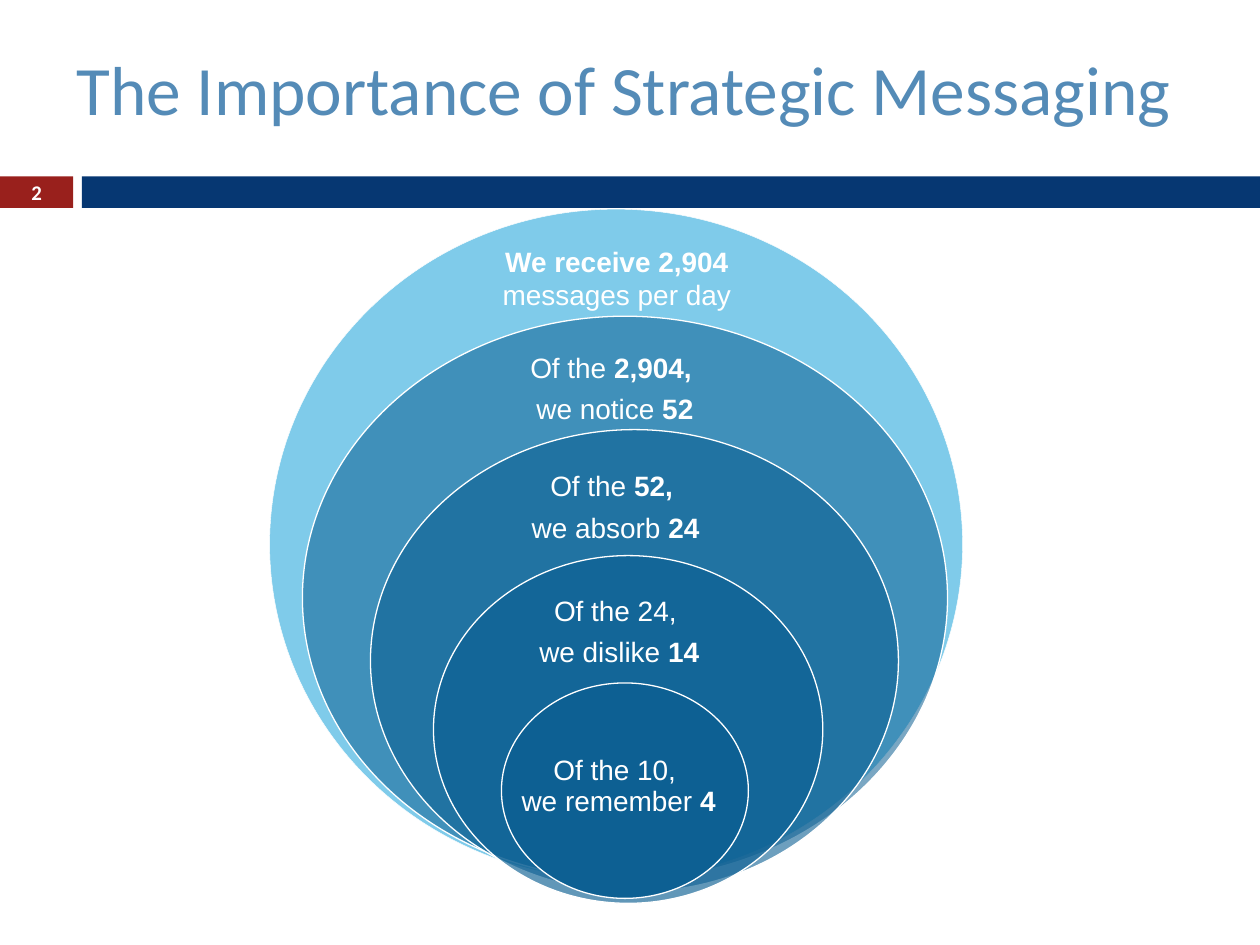
from pptx import Presentation
from pptx.dml.color import RGBColor as RGB
from pptx.enum.shapes import MSO_SHAPE as Shape
from pptx.enum.text import MSO_ANCHOR as Anchor, PP_ALIGN as Align
from pptx.util import Inches, Pt
from lxml import etree

RED = RGB(0x99, 0x20, 0x1C)
NAVY = RGB(0x06, 0x37, 0x72)
STEEL = RGB(0x54, 0x8B, 0xB7)
SKY = RGB(0x00, 0x98, 0xD7)
BLUE = RGB(0x0D, 0x60, 0x93)
WHITE = RGB(0xFF, 0xFF, 0xFF)
NS = "{http://schemas.openxmlformats.org/drawingml/2006/main}"

prs = Presentation()
prs.slide_width, prs.slide_height = Inches(10), Inches(7.5)
slide = prs.slides.add_slide(prs.slide_layouts[6])


def draw(kind, box, fill, alpha=100):
    shape = slide.shapes.add_shape(kind, *map(Inches, box))
    shape.shadow.inherit = False
    shape.fill.solid()
    shape.fill.fore_color.rgb = fill
    if alpha < 100:
        clr = shape.fill._xPr.find(f"{NS}solidFill/{NS}srgbClr")
        etree.SubElement(clr, NS + "alpha", val=str(alpha * 1000))
    shape.line.fill.background()
    return shape


def write(box, lines, size=16, face="Arial", color=WHITE, align=Align.CENTER,
          inset=(0, 0), lead=None, after=0):
    frame = slide.shapes.add_textbox(*map(Inches, box)).text_frame
    frame.word_wrap = True
    frame.vertical_anchor = Anchor.MIDDLE
    frame.margin_left = frame.margin_right = Inches(inset[0])
    frame.margin_top = frame.margin_bottom = Inches(inset[1])
    for i, line in enumerate(lines):
        para = frame.add_paragraph() if i else frame.paragraphs[0]
        para.alignment = align
        para.line_spacing = lead
        para.space_after = Pt(after)
        for text, bold in line:
            run = para.add_run()
            run.text = text
            run.font.size, run.font.name = Pt(size), face
            run.font.bold = bold
            run.font.color.rgb = color


# Header band, title and slide number
draw(Shape.RECTANGLE, (0, 1.4, 0.58, 0.25), RED)
draw(Shape.RECTANGLE, (0.65, 1.4, 9.35, 0.25), NAVY)
write((0.51, 0.16, 8.92, 1.08), [[("The Importance of Strategic Messaging", False)]],
      39.6, "Calibri", STEEL, Align.LEFT, (0.1, 0.05))
write((0, 1.39, 0.58, 0.27), [[("2", True)]], 11.9, "Calibri")

# Nested circles, largest first
rings = [
    ((2.14, 1.66, 5.5, 5.32), SKY, 50, 0.25),
    ((2.4, 2.51, 5.12, 4.47), BLUE, 55, 0),
    ((2.94, 3.41, 4.19, 3.67), BLUE, 60, 0),
    ((3.44, 4.41, 3.09, 2.76), BLUE, 65, 0),
    ((3.98, 5.42, 1.96, 1.71), BLUE, 100, 0),
]
for box, fill, alpha, width in rings:
    ring = draw(Shape.OVAL, box, fill, alpha)
    ring.line.color.rgb = WHITE
    ring.line.width = Pt(width)

# Ring labels
write((3.4, 1.91, 2.99, 0.59),
      [[("We receive 2,904", True), (" messages per day", False)]], inset=(0.19, 0.19))
labels = [
    ((3.42, 2.72, 2.92, 0.75), 0.19, 6.4,
     [[("Of the ", False), ("2,904, ", True)], [("we notice ", False), ("52", True)]]),
    ((3.44, 3.75, 2.89, 0.57), 0.17, 6.4,
     [[("Of the ", False), ("52, ", True)], [("we absorb ", False), ("24", True)]]),
    ((3.73, 4.75, 2.37, 0.55), 0.17, 6.4,
     [[("Of the 24, ", False)], [("we dislike ", False), ("14", True)]]),
    ((3.86, 5.7, 2.1, 1.09), 0.19, 0,
     [[("Of the 10, ", False)], [("we remember ", False), ("4", True)]]),
]
for box, pad, after, lines in labels:
    write(box, lines, inset=(pad, pad), lead=0.9, after=after)

prs.save("out.pptx")
